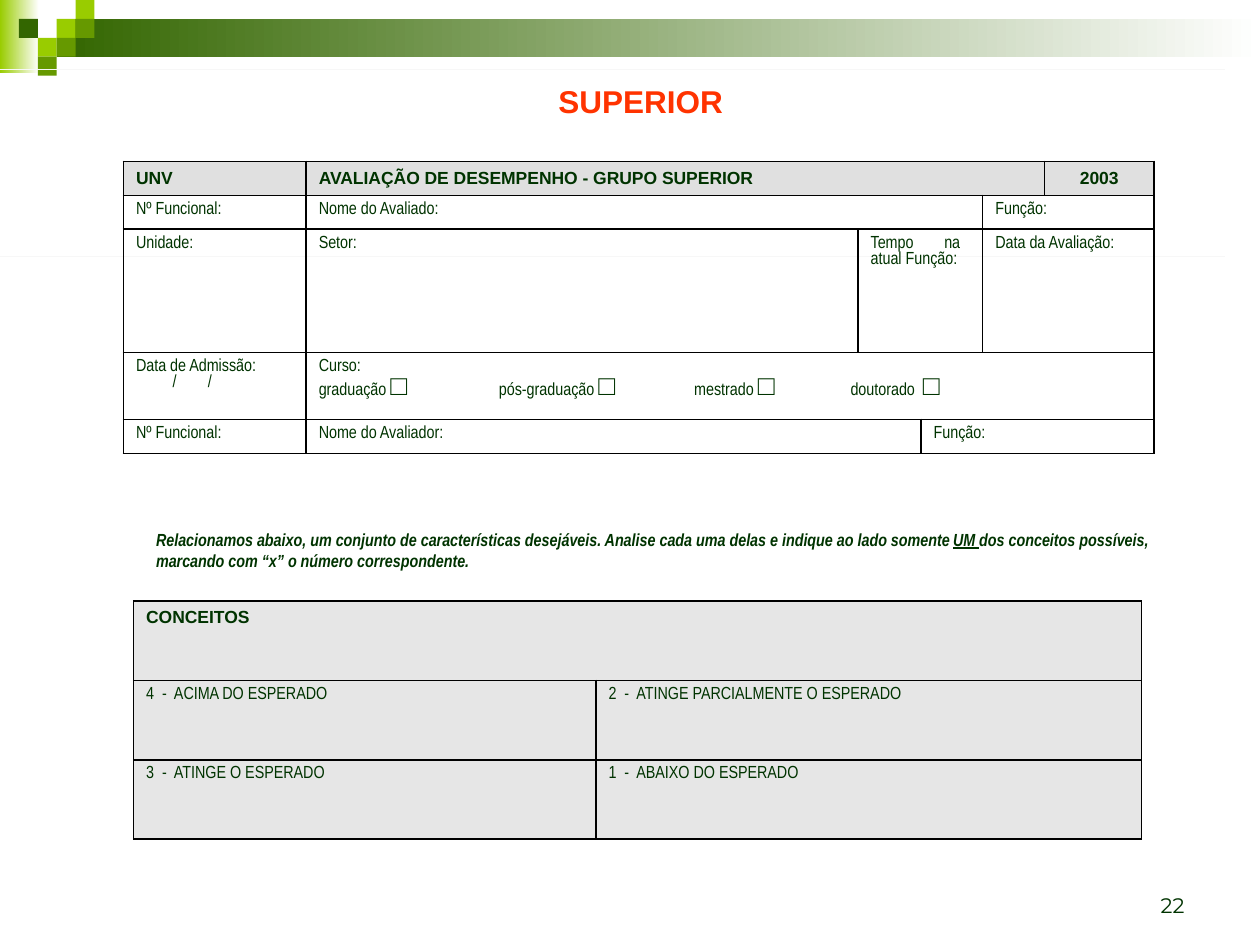
from lxml import etree
from pptx import Presentation
from pptx.dml.color import RGBColor
from pptx.enum.shapes import MSO_CONNECTOR, MSO_SHAPE
from pptx.enum.text import MSO_ANCHOR, PP_ALIGN
from pptx.oxml.ns import qn
from pptx.util import Pt

PX = 9144  # 100 px to the inch
RECT, STRAIGHT = MSO_SHAPE.RECTANGLE, MSO_CONNECTOR.STRAIGHT
LEFT, CENTER, RIGHT, JUSTIFY = PP_ALIGN.LEFT, PP_ALIGN.CENTER, PP_ALIGN.RIGHT, PP_ALIGN.JUSTIFY
TOP, MIDDLE, BOTTOM = MSO_ANCHOR.TOP, MSO_ANCHOR.MIDDLE, MSO_ANCHOR.BOTTOM

LIME = RGBColor(0x99, 0xCC, 0x00)
LEAF = RGBColor(0x66, 0x99, 0x00)
FOREST = RGBColor(0x33, 0x66, 0x00)
INK = RGBColor(0x00, 0x33, 0x00)
RED = RGBColor(0xFF, 0x33, 0x00)
WHITE = RGBColor(0xFF, 0xFF, 0xFF)
RULE_GREY = RGBColor(0xF7, 0xF7, 0xF7)
HEAD_GREY = RGBColor(0xE0, 0xE0, 0xE0)
CELL_GREY = RGBColor(0xE6, 0xE6, 0xE6)

BOX = "□"


def px(*values):
    return [v * PX for v in values]


def add_run(p, text, font="Arial Narrow", size=10, color=INK, bold=False, italic=False):
    r = p.add_run()
    r.text = text
    f = r.font
    f.name, f.size, f.bold, f.italic = font, Pt(size), bold, italic
    f.color.rgb = color
    return r


def add_text_box(s, box, anchor):
    tf = s.shapes.add_textbox(*px(*box)).text_frame
    tf.word_wrap = True
    tf.vertical_anchor = anchor
    return tf.paragraphs[0]


def add_rect(s, box, color, fade=False):
    """Rectangle in one colour, or fading from it to white."""
    sp = s.shapes.add_shape(RECT, *px(*box))
    sp.shadow.inherit = False
    sp.line.fill.background()
    if fade:
        sp.fill.gradient()
        sp.fill.gradient_angle = 0
        for stop, rgb in zip(sp.fill.gradient_stops, (color, WHITE)):
            stop.color.rgb = rgb
    else:
        sp.fill.solid()
        sp.fill.fore_color.rgb = color


def add_banner(s, x, y, w):
    add_rect(s, (x, y, 31, 58), LIME, fade=True)
    add_rect(s, (x + 45, y + 15, w - 45, 30), FOREST, fade=True)
    squares = [(3, 1, LIME), (4, 0, LIME), (4, 1, LEAF), (2, 2, LIME),
               (1, 1, FOREST), (3, 2, LEAF), (2, 3, LEAF)]
    for col, row, color in squares:
        add_rect(s, (x + 15 * col, y + 15 * row, 15, 15), color)


def add_rule(s, x, y, w):
    line = s.shapes.add_connector(STRAIGHT, *px(x, y, x + w, y))
    line.line.color.rgb = RULE_GREY
    line.line.width = Pt(0.25)
    etree.SubElement(line._element.spPr, qn("a:effectLst"))


def set_title(s, box, text):
    sp = s.shapes.title
    sp.left, sp.top, sp.width, sp.height = px(*box)
    tf = sp.text_frame
    tf.vertical_anchor = MIDDLE
    p = tf.paragraphs[0]
    p.alignment = CENTER
    add_run(p, text, "Arial", 18, RED, bold=True)


def set_tabs(p, stops):
    tabs = etree.SubElement(p._p.get_or_add_pPr(), qn("a:tabLst"))
    for pos in stops:
        etree.SubElement(tabs, qn("a:tab"), pos=str(pos * PX), algn="l")


def set_borders(cell):
    tcPr = cell._tc.get_or_add_tcPr()
    for side in ("lnL", "lnR", "lnT", "lnB"):
        ln = etree.SubElement(tcPr, qn("a:" + side), w=str(Pt(1)))
        fill = etree.SubElement(ln, qn("a:solidFill"))
        etree.SubElement(fill, qn("a:srgbClr"), val="000000")


def add_grid(s, x, y, cols, rows):
    """Bordered, unfilled table at x, y with the given column and row sizes."""
    shape = s.shapes.add_table(len(rows), len(cols), *px(x, y, sum(cols), sum(rows)))
    table = shape.table
    table.first_row = table.horz_banding = False
    for col, w in zip(table.columns, cols):
        col.width = w * PX
    for row, h in zip(table.rows, rows):
        row.height = h * PX
    for cell in table.iter_cells():
        set_borders(cell)
        cell.fill.background()
        cell.margin_left = cell.margin_right = 10 * PX
        cell.margin_top = cell.margin_bottom = 5 * PX
    return table


def open_cell(table, row, col, span=1, fill=None):
    cell = table.cell(row, col)
    if span > 1:
        cell.merge(table.cell(row, col + span - 1))
    if fill is not None:
        cell.fill.solid()
        cell.fill.fore_color.rgb = fill
    return cell


def add_heading(table, row, col, text, span=1, fill=HEAD_GREY, align=LEFT, anchor=MIDDLE):
    cell = open_cell(table, row, col, span, fill)
    cell.vertical_anchor = anchor
    p = cell.text_frame.paragraphs[0]
    p.alignment = align
    add_run(p, text, "Arial", bold=True)


def add_entry(table, row, col, text, span=1, fill=None):
    cell = open_cell(table, row, col, span, fill)
    p = cell.text_frame.paragraphs[0]
    p.alignment = JUSTIFY
    add_run(p, text)
    return cell


def add_tabbed_line(cell, stops):
    p = cell.text_frame.add_paragraph()
    p.alignment = LEFT
    set_tabs(p, stops)
    return p


def add_form(s, x, y):
    table = add_grid(s, x, y, [145, 438, 50, 49, 49, 87], [27, 27, 98, 53, 27])
    add_heading(table, 0, 0, "UNV")
    add_heading(table, 0, 1, "AVALIAÇÃO DE DESEMPENHO - GRUPO SUPERIOR", span=4)
    add_heading(table, 0, 5, "2003", align=CENTER)
    fields = [(1, 0, "Nº Funcional:", 1), (1, 1, "Nome do Avaliado:", 3),
              (1, 4, "Função:", 2),
              (2, 0, "Unidade:", 1), (2, 1, "Setor:", 1),
              (2, 4, "Data da Avaliação:", 2),
              (4, 0, "Nº Funcional:", 1), (4, 1, "Nome do Avaliador:", 2),
              (4, 3, "Função:", 3)]
    for field in fields:
        add_entry(table, *field)

    # The wider margin wraps the label after "na"
    add_entry(table, 2, 2, "Tempo na atual Função:", 2).margin_right = 18 * PX

    p = add_tabbed_line(add_entry(table, 3, 0, "Data de Admissão:"), [29, 57])
    add_run(p, "\t/\t/")

    p = add_tabbed_line(add_entry(table, 3, 1, "Curso:", 5), [143, 298, 422])
    courses = ["graduação ", "\tpós-graduação ", "\tmestrado ", "\tdoutorado  "]
    for course in courses:
        add_run(p, course)
        add_run(p, BOX, size=16)


def add_instructions(s, box):
    p = add_text_box(s, box, TOP)
    parts = [("Relacionamos abaixo, um conjunto de características desejáveis. "
              "Analise cada uma delas e indique ao lado somente ", False),
             ("UM ", True),
             ("dos conceitos possíveis, marcando com “x” o número correspondente.", False)]
    for text, underline in parts:
        add_run(p, text, bold=True, italic=True).font.underline = underline


def add_concepts(s, x, y):
    table = add_grid(s, x, y, [367, 433], [63] * 3)
    add_heading(table, 0, 0, "CONCEITOS", span=2, fill=CELL_GREY, anchor=TOP)
    grades = [["4  -  ACIMA DO ESPERADO", "2  -  ATINGE PARCIALMENTE O ESPERADO"],
              ["3  -  ATINGE O ESPERADO", "1  -  ABAIXO DO ESPERADO"]]
    for row, texts in enumerate(grades, 1):
        for col, text in enumerate(texts):
            add_entry(table, row, col, text, fill=CELL_GREY)


def add_page_number(s, box, number):
    p = add_text_box(s, box, BOTTOM)
    p.alignment = RIGHT
    add_run(p, number, "Montserrat", 12)


def main():
    prs = Presentation()
    prs.slide_width, prs.slide_height = px(1000, 750)
    s = prs.slides.add_slide(prs.slide_layouts[5])
    add_banner(s, 0, 0, 1000)
    for y in (55, 203):
        add_rule(s, 0, y, 972)
    set_title(s, (83, 60, 851, 40), "SUPERIOR")
    add_form(s, 98, 128)
    add_instructions(s, (114, 415, 858, 43))
    add_concepts(s, 106, 477)
    add_page_number(s, (717, 683, 233, 50), "22")
    prs.save("out.pptx")


if __name__ == "__main__":
    main()
